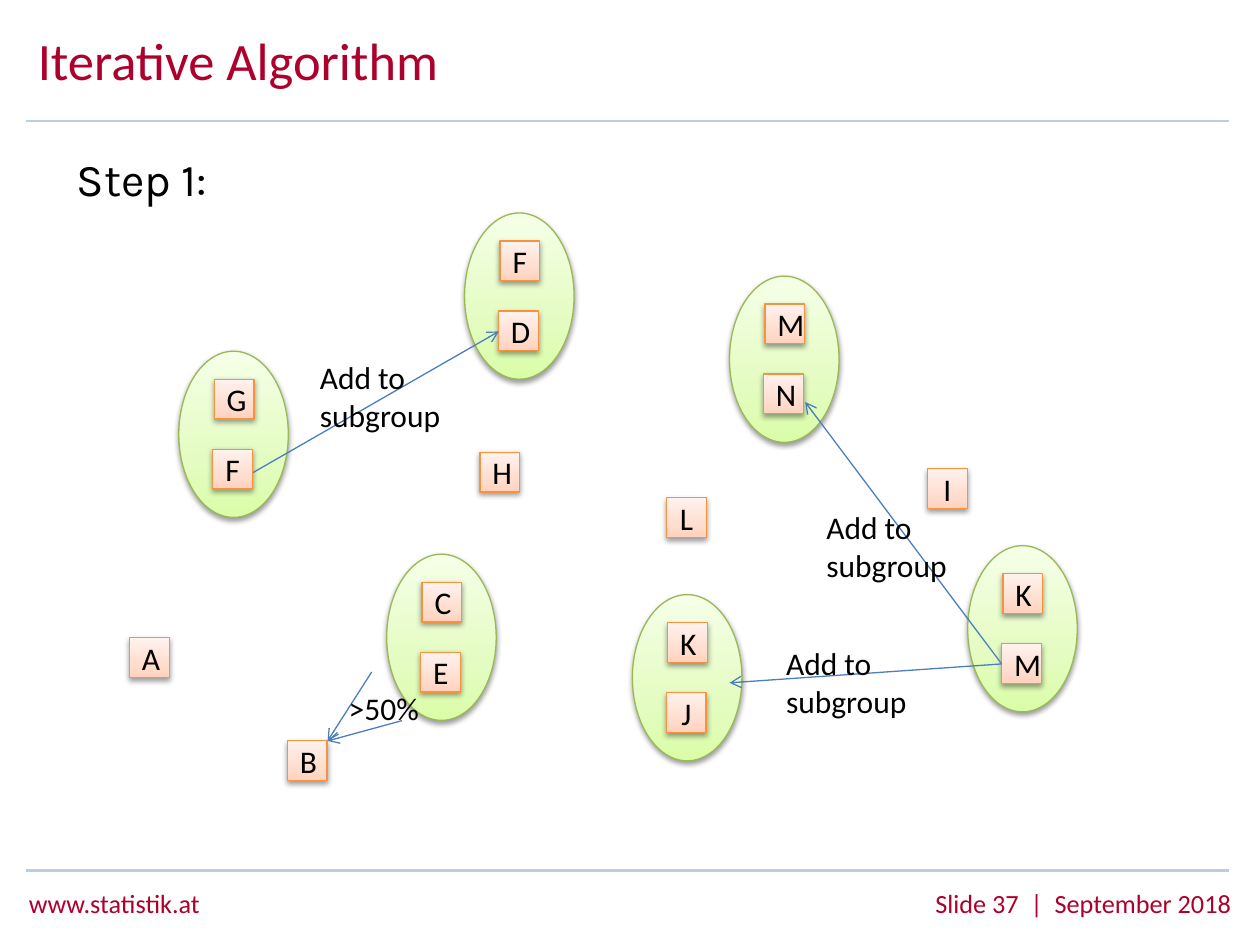
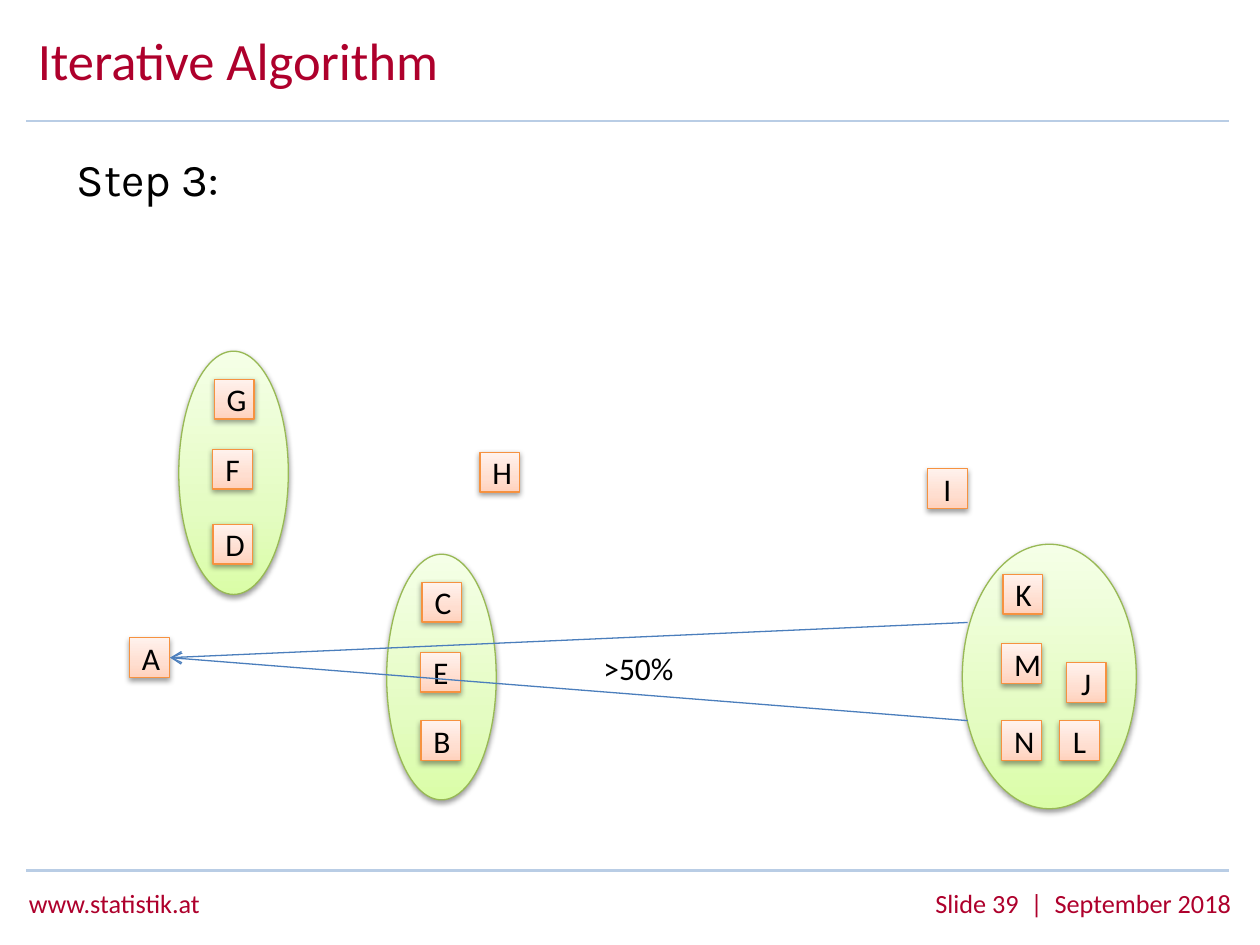
"""Build the two Iterative Algorithm slides."""
from typing import NamedTuple

from lxml import etree
from pptx import Presentation
from pptx import util as u
from pptx.dml.color import RGBColor
from pptx.enum import shapes, text
from pptx.oxml import ns

Pt = u.Pt
COLOURS = {
    "brand": "AE002C", "rule": "B9CDE5", "ink": "000000", "arrow": "4B7EBC",
    "cluster_line": "98B955", "tile_line": "F69240",
}
CLUSTER_STOPS = ((0, "DAFDA7"), (35, "E4FCC2"), (100, "F5FFE7"))
TILE_STOPS = ((0, "FFD2BD"), (35, "FFDED0"), (100, "FFF2ED"))
FONT = "Calibri"
TILE_SIZE = 22.7
MEMBER_OFFSETS = ((20.2, 16), (19.4, 56))
LEFT, RIGHT, JUSTIFY = text.PP_ALIGN.LEFT, text.PP_ALIGN.RIGHT, text.PP_ALIGN.JUSTIFY


class Tile(NamedTuple):
    """A lettered square."""
    letter: str
    left: float
    top: float


class Cluster(NamedTuple):
    """An ellipse whose members stack from its top."""
    members: str
    left: float
    top: float
    width: float = 62.6
    height: float = 95


class Arrow(NamedTuple):
    """A line with its head at the end."""
    x1: float
    y1: float
    x2: float
    y2: float


class Label(NamedTuple):
    """A text box with its style."""
    words: str
    left: float
    top: float
    width: float
    height: float
    size: float = 18
    colour: str = "ink"
    font: str = FONT
    align: text.PP_ALIGN = LEFT


class Step(NamedTuple):
    """The content of one slide."""
    number: int
    page: int
    clusters: list[Cluster]
    tiles: list[Tile]
    arrows: list[Arrow]
    labels: list[Label]


FIXED_TILES = [Tile("A", 74, 364.3), Tile("H", 274.3, 258.5), Tile("I", 530, 267.8)]

STEPS = [
    Step(
        1, 37,
        [Cluster("GF", 102.2, 200.7), Cluster("CE", 221, 316.7), Cluster("FD", 265.5, 121.7),
         Cluster("KJ", 361.4, 339.8), Cluster("MN", 416.9, 157.8), Cluster("KM", 553, 311.8)],
        [Tile("B", 164.2, 423.2), Tile("L", 380.9, 284.4)],
        [Arrow(212.4, 384, 187.2, 423.4), Arrow(229.7, 411.8, 187.2, 423.4),
         Arrow(572.4, 379.4, 460.1, 229.7), Arrow(144.7, 270, 285.1, 189.4),
         Arrow(572.4, 379.4, 416.9, 390.2)],
        [Label(">50%", 192.2, 390.2, 72.7, 28.8)]
        + [Label("Add to subgroup", left, top, 87.8, 51)
           for left, top in ((175.7, 200.9), (465.1, 286.6), (442.1, 364.3))],
    ),
    Step(
        3, 39,
        [Cluster("", 549.9, 311, 99.4, 151.2), Cluster("GF", 102.2, 200.7, height=139),
         Cluster("CE", 221, 316.7, height=140.4)],
        [Tile("D", 121.7, 299.6), Tile("B", 240.5, 411.8), Tile("K", 573.1, 328.2),
         Tile("M", 572.4, 367.9), Tile("N", 572.4, 411.8), Tile("L", 605.5, 411.8),
         Tile("J", 609.3, 378.7)],
        [Arrow(553, 355.7, 97.2, 375.8), Arrow(553, 411.8, 97.2, 375.8)],
        [Label(">50%", 337.7, 367.4, 72.7, 28.8)],
    ),
]


def rgb(name: str) -> RGBColor:
    """Return a named colour."""
    return RGBColor.from_string(COLOURS[name])


def style_text(frame, words: str, size: float, colour: str, font: str, align) -> None:
    """Fill a frame with one formatted paragraph."""
    frame.text = words
    paragraph = frame.paragraphs[0]
    paragraph.alignment = align
    for run in paragraph.runs:
        run.font.size, run.font.name = Pt(size), font
        run.font.color.rgb = rgb(colour)


def add_label(slide, label: Label) -> None:
    """Draw a wrapping text box."""
    box = slide.shapes.add_textbox(*map(Pt, label[1:5]))
    box.text_frame.word_wrap = True
    box.text_frame.auto_size = text.MSO_AUTO_SIZE.SHAPE_TO_FIT_TEXT
    style_text(box.text_frame, label.words, label.size, label.colour, label.font, label.align)


def add_line(slide, ends: Arrow, colour: str, width: float, head: bool = False) -> None:
    """Draw a straight line, with an open arrowhead if asked."""
    line = slide.shapes.add_connector(shapes.MSO_CONNECTOR.STRAIGHT, *map(Pt, ends))
    line.line.color.rgb, line.line.width = rgb(colour), Pt(width)
    if head:
        etree.SubElement(line.line._get_or_add_ln(), ns.qn("a:tailEnd"), type="arrow")
    etree.SubElement(line._element.spPr, ns.qn("a:effectLst"))


def add_raised(slide, kind, box: tuple, stops: tuple, line_colour: str):
    """Draw a shape with a rising gradient and a soft shadow."""
    shape = slide.shapes.add_shape(kind, *map(Pt, box))
    shape.line.color.rgb, shape.line.width = rgb(line_colour), Pt(0.75)
    shape.fill.gradient()
    stop_list = shape._element.spPr.find(".//" + ns.qn("a:gsLst"))
    for old_stop in list(stop_list):
        stop_list.remove(old_stop)
    for percent, colour in stops:
        stop = etree.SubElement(stop_list, ns.qn("a:gs"), pos=str(percent * 1000))
        etree.SubElement(stop, ns.qn("a:srgbClr"), val=colour)
    shape.shadow.inherit = False
    effects = shape._element.spPr.find(ns.qn("a:effectLst"))
    shadow = etree.SubElement(effects, ns.qn("a:outerShdw"), blurRad=str(Pt(3.15)),
                              dist=str(Pt(1.57)), dir="5400000", rotWithShape="0")
    tint = etree.SubElement(shadow, ns.qn("a:srgbClr"), val=COLOURS["ink"])
    etree.SubElement(tint, ns.qn("a:alpha"), val="38000")
    return shape


def add_tile(slide, tile: Tile) -> None:
    """Draw a lettered square."""
    square = add_raised(slide, shapes.MSO_SHAPE.RECTANGLE,
                        (tile.left, tile.top, TILE_SIZE, TILE_SIZE), TILE_STOPS, "tile_line")
    style_text(square.text_frame, tile.letter, 18, "ink", FONT, text.PP_ALIGN.CENTER)


def add_cluster(slide, cluster: Cluster) -> None:
    """Draw an ellipse and its members."""
    add_raised(slide, shapes.MSO_SHAPE.OVAL, cluster[1:], CLUSTER_STOPS, "cluster_line")
    for letter, (dx, dy) in zip(cluster.members, MEMBER_OFFSETS):
        add_tile(slide, Tile(letter, cluster.left + dx, cluster.top + dy))


def add_frame(slide, step: Step) -> None:
    """Draw the title, rules, footer and step heading."""
    title = slide.shapes.title
    title.left, title.top, title.width, title.height = map(Pt, (14.4, 18, 549.4, 38.2))
    style_text(title.text_frame, "Iterative Algorithm", 30, "brand", FONT, LEFT)
    title.text_frame.paragraphs[0].line_spacing = Pt(30)
    title.text_frame.vertical_anchor = text.MSO_ANCHOR.MIDDLE
    title.text_frame.auto_size = text.MSO_AUTO_SIZE.SHAPE_TO_FIT_TEXT
    for y in (69.1, 497.5):
        add_line(slide, Arrow(15.1, y, 702, y), "rule", 1.5)
    add_label(slide, Label("www.statistik.at", 9.4, 503.3, 163.4, 25.2, 15, "brand"))
    add_label(slide, Label(f"Slide {step.page}  |  September 2018", 450, 503.3, 260.6, 25.2,
                           15, "brand", align=RIGHT))
    add_label(slide, Label(f"Step {step.number}:", 36.7, 82.8, 640.8, 38.9, 26,
                           font="Karla", align=JUSTIFY))


def main() -> None:
    """Build and save the presentation."""
    deck = Presentation()
    deck.slide_width, deck.slide_height = Pt(720), Pt(540)
    for step in STEPS:
        slide = deck.slides.add_slide(deck.slide_layouts.get_by_name("Title Only"))
        add_frame(slide, step)
        for cluster in step.clusters:
            add_cluster(slide, cluster)
        for tile in FIXED_TILES + step.tiles:
            add_tile(slide, tile)
        for arrow in step.arrows:
            add_line(slide, arrow, "arrow", 0.75, head=True)
        for label in step.labels:
            add_label(slide, label)
    deck.save("out.pptx")


if __name__ == "__main__":
    main()
